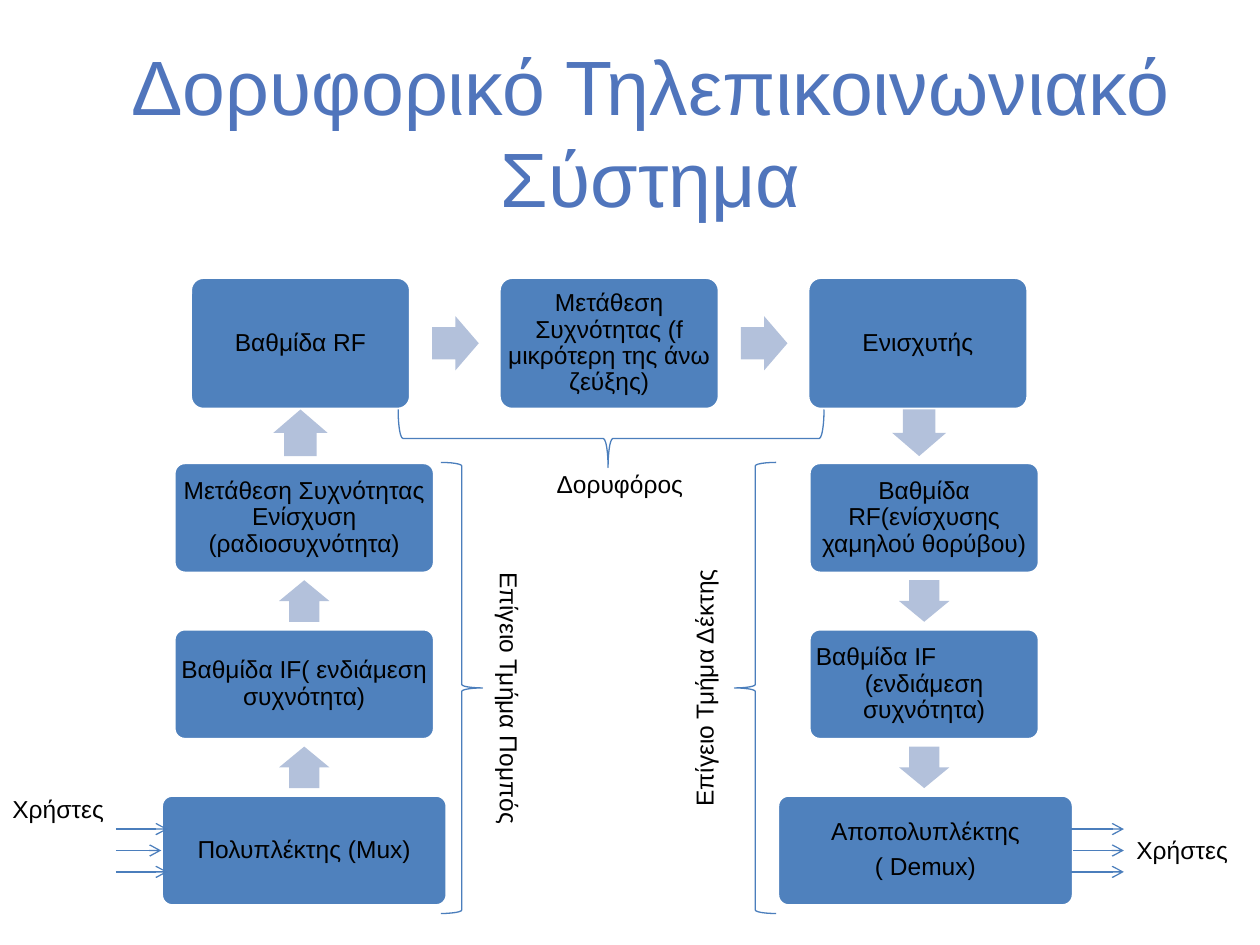
from pptx import Presentation
from pptx.dml.color import RGBColor
from pptx.enum.shapes import MSO_CONNECTOR, MSO_SHAPE as Shape
from pptx.enum.text import MSO_ANCHOR, MSO_AUTO_SIZE, PP_ALIGN as Align
from pptx.oxml.ns import qn
from pptx.util import Inches, Pt
from lxml import etree

BLUE = RGBColor(0x4F, 0x81, 0xBD)
PALE_BLUE = RGBColor(0xB3, 0xC1, 0xDB)
LINE_BLUE = RGBColor(0x4B, 0x7E, 0xBC)
TITLE_BLUE = RGBColor(0x50, 0x75, 0xBC)
WHITE = RGBColor(0xFF, 0xFF, 0xFF)
BLACK = RGBColor(0, 0, 0)
FONT = "Arial"


def write(shape, lines, size=14, color=BLACK, align=Align.CENTER):
    """Fill the shape with one paragraph per line and return the paragraphs."""
    frame = shape.text_frame
    frame.text = "\n".join(lines)
    frame.word_wrap = True
    for para in frame.paragraphs:
        para.alignment = align
        para.font.name = FONT
        para.font.size = Pt(size)
        para.font.color.rgb = color
    return frame.paragraphs


def add_preset(kind, left, top, width, height, fill=None, rotation=0):
    shape = page.shapes.add_shape(
        kind, Inches(left), Inches(top), Inches(width), Inches(height))
    shape.shadow.inherit = False
    shape.rotation = rotation
    if fill is None:
        shape.fill.background()
        shape.line.color.rgb = LINE_BLUE
        shape.line.width = Pt(0.75)
    else:
        shape.fill.solid()
        shape.fill.fore_color.rgb = fill
        shape.line.fill.background()
    return shape


deck = Presentation()
deck.slide_width, deck.slide_height = Inches(10), Inches(7.5)
page = deck.slides.add_slide(deck.slide_layouts[5])

title = page.shapes.title
title.left, title.top = Inches(0.33), Inches(0.25)
title.width, title.height = Inches(9.67), Inches(1.58)
write(title, ["Δορυφορικό Τηλεπικοινωνιακό Σύστημα"], 44, TITLE_BLUE)
title.text_frame.auto_size = MSO_AUTO_SIZE.NONE

# Stages: the satellite on top, the ground transmitter left, the receiver right
SATELLITE_TOP, SATELLITE_HEIGHT = 2.2, 1.05
GROUND_TOPS, GROUND_HEIGHT = [3.67, 4.99, 6.31], 0.88
satellite = [(1.51, ["Βαθμίδα RF"]),
             (3.96, ["Μετάθεση Συχνότητας (f μικρότερη της άνω ζεύξης)"]),
             (6.41, ["Ενισχυτής"])]
transmitter = [(1.38, 2.07, ["Μετάθεση Συχνότητας Ενίσχυση (ραδιοσυχνότητα)"]),
               (1.38, 2.07, ["Βαθμίδα IF( ενδιάμεση συχνότητα)"]),
               (1.28, 2.27, ["Πολυπλέκτης (Μux)"])]
receiver = [(6.42, 1.83, ["Βαθμίδα RF(ενίσχυσης χαμηλού θορύβου)"]),
            (6.42, 1.83, ["Βαθμίδα IF", "(ενδιάμεση συχνότητα)"]),
            (6.17, 2.35, ["Αποπολυπλέκτης", "( Demux)"])]

stages = [(left, SATELLITE_TOP, 1.75, SATELLITE_HEIGHT, lines)
          for left, lines in satellite]
for column in (transmitter, receiver):
    stages += [(left, top, width, GROUND_HEIGHT, lines)
               for top, (left, width, lines) in zip(GROUND_TOPS, column)]

boxes = []
for left, top, width, height, lines in stages:
    box = add_preset(Shape.ROUNDED_RECTANGLE, left, top, width, height, BLUE)
    box.adjustments[0] = 0.1
    box.line.color.rgb = WHITE
    box.line.width = Pt(2)
    frame = box.text_frame
    frame.margin_left = frame.margin_right = Inches(0.03)
    frame.margin_top = frame.margin_bottom = Inches(0.03)
    frame.vertical_anchor = MSO_ANCHOR.MIDDLE
    for para in write(box, lines):
        para.line_spacing = 0.9
    for para in frame.paragraphs[:-1]:
        para.space_after = Pt(4.9)
    boxes.append(box)
multiplexer, receiver_if, demultiplexer = boxes[5], boxes[7], boxes[8]

# The IF stage of the receiver starts with a left-aligned line
receiver_if.text_frame.paragraphs[0].alignment = Align.LEFT
receiver_if.text_frame.paragraphs[0].space_after = Pt(0)

# Block arrows between the stages
block_arrows = [(left, 2.51, 0.37, 0.43, 0) for left in (3.43, 5.88)]
block_arrows += [(2.2, 3.22, 0.37, 0.43, 270), (7.11, 3.22, 0.37, 0.43, 90)]
block_arrows += [(left, top, 0.33, 0.4, rotation)
                 for left, rotation in ((2.25, 270), (7.17, 90))
                 for top in (4.57, 5.89)]
for left, top, width, height, rotation in block_arrows:
    arrow = add_preset(Shape.RIGHT_ARROW, left, top, width, height,
                       PALE_BLUE, rotation)
    arrow.adjustments[0] = 0.6
    arrow.adjustments[1] = 0.5

# Braces around the three segments
satellite_brace = add_preset(Shape.LEFT_BRACE, 4.62, 1.79, 0.46, 3.38, rotation=270)
satellite_brace.adjustments[1] = 0.493
add_preset(Shape.RIGHT_BRACE, 3.5, 3.67, 0.33, 3.58)
add_preset(Shape.LEFT_BRACE, 5.83, 3.67, 0.33, 3.58)

for text, left, top, width, rotation, align in [
        ("Δορυφόρος", 4.17, 3.67, 1.5, 0, Align.CENTER),
        ("Επίγειο Τμήμα Πομπός", 2.58, 5.37, 2.92, 90, Align.CENTER),
        ("Επίγειο Τμήμα Δέκτης", 4.13, 5.29, 2.92, 270, Align.CENTER),
        ("Χρήστες", 8.92, 6.58, 1.08, 0, Align.LEFT),
        ("Χρήστες", 0, 6.25, 1.5, 0, Align.LEFT)]:
    label = page.shapes.add_textbox(
        Inches(left), Inches(top), Inches(width), Inches(0.34))
    label.rotation = rotation
    write(label, [text], align=align)

# User lines into the multiplexer and out of the demultiplexer
for y in (6.58, 6.75, 6.92):
    for start, end in ((0.92, 1.33), (8.5, 8.92)):
        user_line = page.shapes.add_connector(
            MSO_CONNECTOR.STRAIGHT, Inches(start), Inches(y), Inches(end), Inches(y))
        user_line.line.color.rgb = LINE_BLUE
        user_line.line.width = Pt(0.75)
        if y == 6.75 and start < 5:
            user_line.end_connect(multiplexer, 1)
        elif y == 6.75:
            user_line.begin_connect(demultiplexer, 3)
        etree.SubElement(user_line.line._get_or_add_ln(), qn("a:tailEnd"), type="arrow")
        etree.SubElement(user_line._element.spPr, qn("a:effectLst"))

deck.save("out.pptx")
